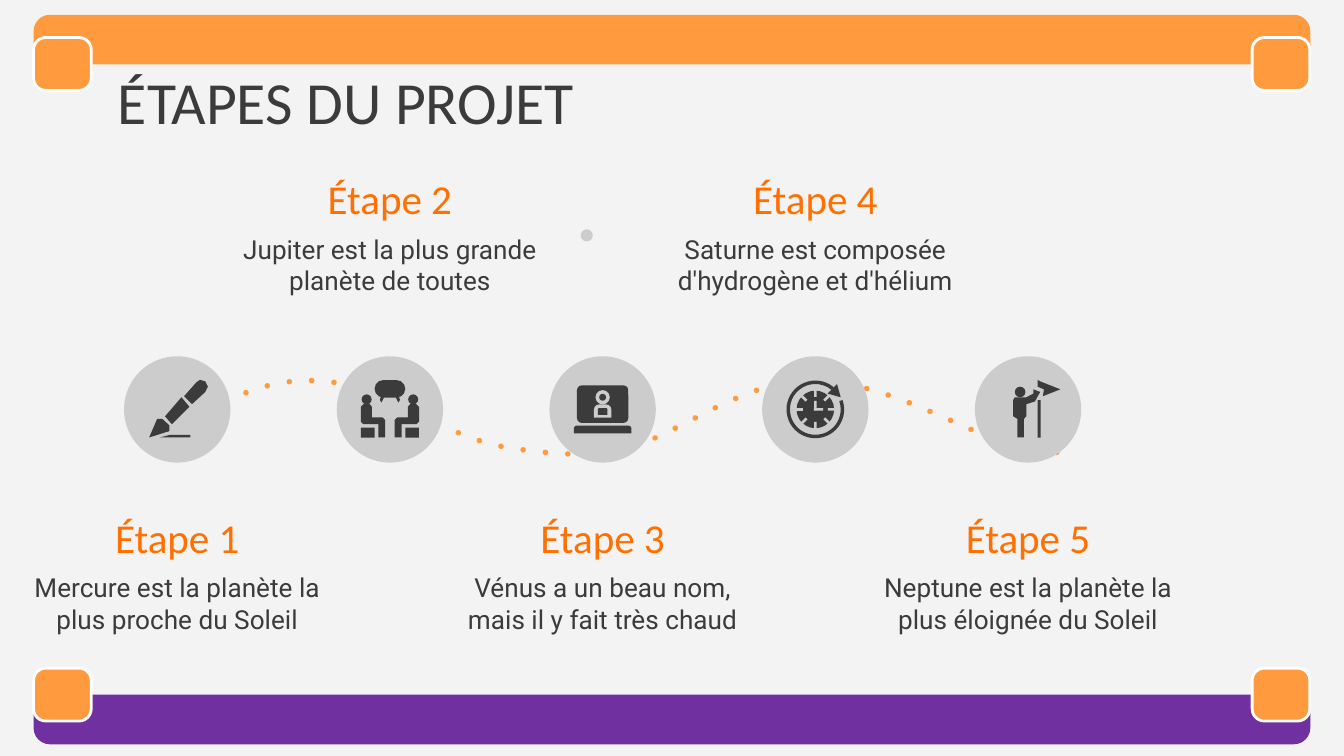
import math

import pptx
import pptx.util
import pptx.dml.color
import pptx.enum.shapes
import pptx.enum.text
import pptx.oxml.ns
from lxml import etree

Cm = pptx.util.Cm
Preset = pptx.enum.shapes.MSO_SHAPE
Align = pptx.enum.text.PP_ALIGN
rgb = pptx.dml.color.RGBColor.from_string

ORANGE, PURPLE, GREY, DARK = "FF9A3F", "7030A0", "CCCCCC", "3B3B3B"

presentation = pptx.Presentation()
presentation.slide_width, presentation.slide_height = Cm(25.4), Cm(14.29)
slide = presentation.slides.add_slide(presentation.slide_layouts[5])
slide.background.fill.solid()
slide.background.fill.fore_color.rgb = rgb("F3F3F3")


def write(shape, text, size, font, color, align):
    frame = shape.text_frame
    frame.word_wrap = True
    frame.auto_size = pptx.enum.text.MSO_AUTO_SIZE.NONE
    frame.vertical_anchor = pptx.enum.text.MSO_ANCHOR.MIDDLE
    frame.margin_left = frame.margin_right = Cm(0.25)
    frame.margin_top = frame.margin_bottom = Cm(0.25)
    paragraph = frame.paragraphs[0]
    paragraph.alignment = align
    run = paragraph.add_run()
    run.text = text
    run.font.size = pptx.util.Pt(size)
    run.font.name = font
    run.font.color.rgb = rgb(color)


def draw(preset, center_x, center_y, width, height, color, adjustments=(), rotation=0):
    """Add a filled preset shape, placed by its centre in centimetres."""
    shape = slide.shapes.add_shape(preset, Cm(center_x - width / 2), Cm(center_y - height / 2),
                                   Cm(width), Cm(height))
    shape.shadow.inherit = False
    shape.fill.solid()
    shape.fill.fore_color.rgb = rgb(color)
    shape.line.fill.background()
    shape.rotation = rotation
    for index, value in enumerate(adjustments):
        shape.adjustments[index] = value
    return shape


# Frame: a bar with two corner blocks at the top and at the bottom
for bar_y, block_y, bar_color in ((13.6, 13.13, PURPLE), (0.75, 1.21, ORANGE)):
    draw(Preset.ROUNDED_RECTANGLE, 12.7, bar_y, 24.13, 0.94, bar_color, [0.33])
    for block_x in (1.18, 24.21):
        block = draw(Preset.ROUNDED_RECTANGLE, block_x, block_y, 1.09, 1, ORANGE, [0.23])
        block.line.color.rgb = rgb("FFFFFF")
        block.line.width = pptx.util.Pt(1.5)

title = slide.shapes.title
title.left, title.top, title.width, title.height = Cm(1.98), Cm(1.24), Cm(21.41), Cm(1.32)
write(title, "ÉTAPES DU PROJET", size=32, font="Calibri", color=DARK, align=Align.LEFT)

# Dotted wave: Bézier segments, each as two control points and an end point
wave_start = (3.23, 8.33)
wave_segments = [
    ((4.01, 7.54), (5.31, 7.01), (6.4, 7.24)),
    ((7.52, 7.47), (8.46, 8.28), (9.58, 8.46)),
    ((10.46, 8.59), (11.46, 8.71), (12.27, 8.33)),
    ((13.31, 7.87), (14.35, 7.11), (15.49, 7.19)),
    ((16.56, 7.26), (17.55, 7.77), (18.54, 8.2)),
    ((19.08, 8.43), (19.74, 8.69), (20.32, 8.48)),
]
wave_points = [wave_start]
for control_1, control_2, end in wave_segments:
    start = wave_points[-1]
    for t in (i / 10 for i in range(1, 11)):
        wave_points.append(tuple(
            (1 - t) ** 3 * a + 3 * (1 - t) ** 2 * t * b + 3 * (1 - t) * t ** 2 * c + t ** 3 * d
            for a, b, c, d in zip(start, control_1, control_2, end)))
builder = slide.shapes.build_freeform(Cm(wave_start[0]), Cm(wave_start[1]))
builder.add_line_segments([(Cm(x), Cm(y)) for x, y in wave_points[1:]], close=False)
wave = builder.convert_to_shape()
wave.shadow.inherit = False
wave.fill.background()
wave.line.color.rgb = rgb(ORANGE)
wave.line.width = pptx.util.Pt(3)
wave_line = wave.element.spPr.find(pptx.oxml.ns.qn("a:ln"))
wave_line.set("cap", "rnd")
etree.SubElement(wave_line, pptx.oxml.ns.qn("a:prstDash")).set("val", "dot")

# Steps: odd ones below the wave, even ones above it
steps = [
    "Mercure est la planète la plus proche du Soleil",
    "Jupiter est la plus grande planète de toutes",
    "Vénus a un beau nom, mais il y fait très chaud",
    "Saturne est composée d'hydrogène et d'hélium",
    "Neptune est la planète la plus éloignée du Soleil",
]
step_y = 7.74
step_xs = [3.35 + 4.02 * i for i in range(len(steps))]
for number, (step_x, description) in enumerate(zip(step_xs, steps), start=1):
    top = 9.58 if number % 2 else 3.18
    heading = slide.shapes.add_textbox(Cm(step_x - 3.34), Cm(top), Cm(6.68), Cm(1.14))
    write(heading, f"Étape {number}", size=22, font="Calibri", color="FF7000", align=Align.CENTER)
    body = slide.shapes.add_textbox(Cm(step_x - 3.19), Cm(top + 1.16), Cm(6.38), Cm(1.32))
    write(body, description, size=14, font="Roboto", color=DARK, align=Align.CENTER)
    draw(Preset.OVAL, step_x, step_y, 2.01, 2.01, GREY)
draw(Preset.OVAL, 11.09, 4.45, 0.23, 0.23, GREY)

pen, meeting, laptop, clock, guide = step_xs

# Icon parts: icon centre, preset, offset, size, colour, adjustments, rotation
icon_parts = [
    (meeting, Preset.ROUNDED_RECTANGLE, 0, -0.39, 0.58, 0.33, DARK, [0.5]),
    (laptop, Preset.ROUNDED_RECTANGLE, 0, -0.1, 0.97, 0.71, DARK, [0.13]),
    (laptop, Preset.OVAL, 0, -0.23, 0.27, 0.27, GREY),
    (laptop, Preset.OVAL, 0, -0.23, 0.13, 0.13, DARK),
    (laptop, Preset.ROUND_2_SAME_RECTANGLE, 0, 0.03, 0.33, 0.25, GREY, [0.4]),
    (laptop, Preset.ROUND_2_SAME_RECTANGLE, 0, 0.04, 0.18, 0.13, DARK, [0.2]),
    (laptop, Preset.ROUND_2_SAME_RECTANGLE, 0, 0.38, 1.09, 0.15, DARK, [0.4]),
    (clock, Preset.BLOCK_ARC, 0, 0, 1.09, 1.09, DARK, [341 * 0.6, 310 * 0.6, 0.06]),
    (clock, Preset.OVAL, 0, 0, 0.71, 0.71, DARK),
    (clock, Preset.RECTANGLE, 0, -0.07, 0.05, 0.18, GREY),
    (clock, Preset.RECTANGLE, 0.06, 0, 0.18, 0.05, GREY),
    (guide, Preset.RECTANGLE, 0.21, 0.18, 0.06, 0.71, DARK),
    (guide, Preset.OVAL, -0.15, -0.33, 0.2, 0.2, DARK),
]
for angle in range(0, 360, 45):
    tick_x, tick_y = 0.3 * math.sin(math.radians(angle)), -0.3 * math.cos(math.radians(angle))
    icon_parts.append((clock, Preset.RECTANGLE, tick_x, tick_y, 0.05, 0.13, GREY, [], angle))

# Icon outlines: icon centre and corner offsets
icon_outlines = [
    (pen, [(-0.38, 0.18), (-0.53, 0.53), (-0.15, 0.41), (-0.15, 0.3), (-0.28, 0.18)]),
    (pen, [(0.08, -0.23), (-0.23, 0.13), (-0.1, 0.28), (0.23, -0.05)]),
    (pen, [(0.43, -0.56), (0.36, -0.51), (0.13, -0.25), (0.28, -0.1), (0.53, -0.33),
           (0.58, -0.43), (0.53, -0.53)]),
    (pen, [(-0.13, 0.48), (-0.33, 0.53), (0.25, 0.53), (0.25, 0.48)]),
    (clock, [(0.23, -0.3), (0.48, -0.23), (0.41, -0.48)]),
    (guide, [(0.18, -0.56), (0.18, -0.43), (0.3, -0.38), (0.28, -0.25), (0.61, -0.38),
             (0.23, -0.53)]),
    (guide, [(0.1, -0.38), (0.1, -0.3), (-0.03, -0.23), (-0.25, -0.23), (-0.28, -0.18),
             (-0.28, 0.13), (-0.2, 0.18), (-0.2, 0.53), (-0.08, 0.53), (-0.08, 0.18),
             (-0.03, 0.13), (-0.03, -0.1), (0.13, -0.15), (0.2, -0.28), (0.23, -0.33)]),
]
sitter = [(0.5, -0.1), (0.38, -0.1), (0.34, -0.05), (0.34, 0.15), (0.14, 0.15), (0.09, 0.2),
          (0.09, 0.53), (0.22, 0.53), (0.22, 0.28), (0.5, 0.28), (0.55, 0.23), (0.55, -0.05)]
bubble_tail = [(0.17, -0.25), (0.19, -0.18), (0.16, -0.13), (0.11, -0.23)]
for side in (-1, 1):
    icon_parts.append((meeting, Preset.OVAL, side * 0.44, -0.19, 0.19, 0.19, DARK))
    icon_parts.append((meeting, Preset.RECTANGLE, side * 0.42, 0.44, 0.26, 0.19, DARK))
    for outline in (sitter, bubble_tail):
        icon_outlines.append((meeting, [(side * x, y) for x, y in outline]))

for icon_x, preset, dx, dy, *look in icon_parts:
    draw(preset, icon_x + dx, step_y + dy, *look)
for icon_x, offsets in icon_outlines:
    corners = [(Cm(icon_x + dx), Cm(step_y + dy)) for dx, dy in offsets]
    builder = slide.shapes.build_freeform(*corners[0])
    builder.add_line_segments(corners[1:])
    outline = builder.convert_to_shape()
    outline.shadow.inherit = False
    outline.fill.solid()
    outline.fill.fore_color.rgb = rgb(DARK)
    outline.line.fill.background()

presentation.save("out.pptx")
